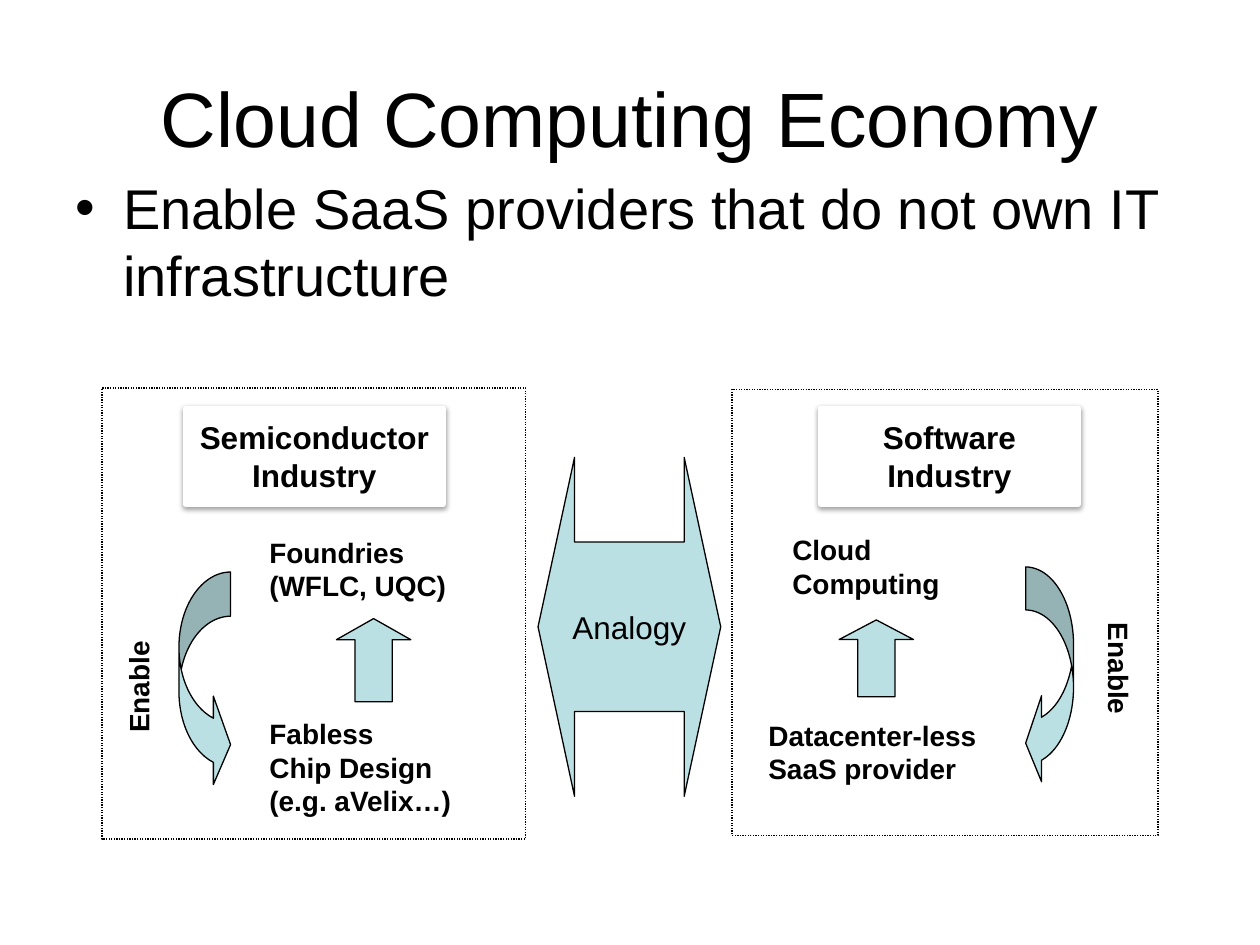
"""Build the Cloud Computing Economy slide, comparing two industries."""
from dataclasses import dataclass

from lxml import etree
from pptx import Presentation
from pptx import util as u
from pptx.dml.color import RGBColor
from pptx.enum import dml, shapes, text
from pptx.oxml import ns

PX = 9144
BLACK = RGBColor(0x00, 0x00, 0x00)
WHITE = RGBColor(0xFF, 0xFF, 0xFF)
TEAL = RGBColor(0xBB, 0xE0, 0xE3)
FONT = "Arial"
GEOMETRY = shapes.MSO_SHAPE
CENTER = text.PP_ALIGN.CENTER
MIDDLE = text.MSO_ANCHOR.MIDDLE


@dataclass(frozen=True)
class Box:
    left: int
    top: int
    width: int
    height: int

    def emu(self) -> list[u.Emu]:
        return [u.Emu(n * PX) for n in (self.left, self.top, self.width, self.height)]


@dataclass(frozen=True)
class Label:
    box: Box
    lines: tuple[str, ...]
    rotation: int = 0


@dataclass(frozen=True)
class Arrow:
    geometry: GEOMETRY
    box: Box
    adjustments: tuple[float, ...]


@dataclass(frozen=True)
class Industry:
    frame: Box
    heading_box: Box
    heading: tuple[str, ...]
    arrows: tuple[Arrow, ...]
    labels: tuple[Label, ...]


SEMICONDUCTOR = Industry(
    Box(81, 308, 336, 358),
    Box(147, 324, 205, 76),
    ("Semiconductor", "Industry"),
    (
        Arrow(GEOMETRY.UP_ARROW, Box(267, 491, 59, 66), (0.5, 0.284)),
        Arrow(GEOMETRY.CURVED_RIGHT_ARROW, Box(142, 454, 41, 172), (0.855, 1.711, 0.333)),
    ),
    (
        Label(Box(204, 420, 174, 67), ("Foundries", "(WFLC, UQC)")),
        Label(Box(204, 564, 182, 97), ("Fabless", "Chip Design", "(e.g. aVelix…)")),
        Label(Box(62, 522, 99, 40), ("Enable",), 270),
    ),
)
SOFTWARE = Industry(
    Box(581, 309, 338, 354),
    Box(651, 324, 205, 76),
    ("Software", "Industry"),
    (
        Arrow(GEOMETRY.UP_ARROW, Box(666, 492, 59, 61), (0.5, 0.264)),
        Arrow(GEOMETRY.CURVED_LEFT_ARROW, Box(814, 450, 38, 174), (0.899, 1.798, 0.333)),
    ),
    (
        Label(Box(619, 418, 149, 68), ("Cloud", "Computing")),
        Label(Box(600, 565, 201, 68), ("Datacenter-less", "SaaS provider")),
        Label(Box(837, 514, 99, 40), ("Enable",), 90),
    ),
)
ANALOGY = Arrow(GEOMETRY.LEFT_RIGHT_ARROW, Box(427, 363, 145, 269), (0.5, 0.2))


def write(shape, lines: tuple[str, ...], size: int, bold: bool = False,
          align=text.PP_ALIGN.LEFT, anchor=text.MSO_ANCHOR.TOP, wrap: bool = True) -> None:
    frame = shape.text_frame
    frame.word_wrap = wrap
    frame.vertical_anchor = anchor
    for index, line in enumerate(lines):
        paragraph = frame.add_paragraph() if index else frame.paragraphs[0]
        paragraph.alignment = align
        run = paragraph.add_run()
        run.text = line
        run.font.name = FONT
        run.font.size = u.Pt(size)
        run.font.bold = bold
        run.font.color.rgb = BLACK


def add_label(slide, label: Label) -> None:
    shape = slide.shapes.add_textbox(*label.box.emu())
    write(shape, label.lines, 16, bold=True, wrap=False)
    shape.text_frame.auto_size = text.MSO_AUTO_SIZE.SHAPE_TO_FIT_TEXT
    shape.rotation = label.rotation


def add_outlined(slide, geometry: GEOMETRY, box: Box, line: RGBColor = BLACK,
                 line_width: float = 0.75):
    shape = slide.shapes.add_shape(geometry, *box.emu())
    shape.shadow.inherit = False
    shape.line.color.rgb = line
    shape.line.width = u.Pt(line_width)
    return shape


def add_arrow(slide, arrow: Arrow):
    shape = add_outlined(slide, arrow.geometry, arrow.box)
    shape.fill.solid()
    shape.fill.fore_color.rgb = TEAL
    for index, value in enumerate(arrow.adjustments):
        shape.adjustments[index] = value
    return shape


def add_frame(slide, box: Box) -> None:
    shape = add_outlined(slide, GEOMETRY.RECTANGLE, box)
    shape.fill.background()
    shape.line.dash_style = dml.MSO_LINE.ROUND_DOT


def add_heading(slide, box: Box, lines: tuple[str, ...]) -> None:
    shape = add_outlined(slide, GEOMETRY.RECTANGLE, box, WHITE, 3)
    shape.fill.solid()
    shape.fill.fore_color.rgb = WHITE
    effects = shape._element.spPr.find(ns.qn("a:effectLst"))
    shadow = etree.SubElement(
        effects, ns.qn("a:outerShdw"), blurRad=str(u.Pt(3.1)), dist=str(u.Pt(1.6)),
        dir="5400000", rotWithShape="0")
    color = etree.SubElement(shadow, ns.qn("a:srgbClr"), val=str(BLACK))
    etree.SubElement(color, ns.qn("a:alpha"), val="38000")
    write(shape, lines, 18, bold=True, align=CENTER, anchor=MIDDLE)


def add_bullet(slide, box: Box, line: str) -> None:
    shape = slide.shapes.add_textbox(*box.emu())
    write(shape, (line,), 32)
    paragraph = shape.text_frame.paragraphs[0]
    paragraph.space_before = u.Pt(6.4)
    properties = paragraph._p.get_or_add_pPr()
    properties.set("marL", str(38 * PX))
    properties.set("indent", str(-38 * PX))
    etree.SubElement(properties, ns.qn("a:buFont"), typeface=FONT)
    etree.SubElement(properties, ns.qn("a:buChar"), char="•")


def add_industry(slide, industry: Industry) -> None:
    add_frame(slide, industry.frame)
    add_heading(slide, industry.heading_box, industry.heading)
    for arrow in industry.arrows:
        add_arrow(slide, arrow)
    for label in industry.labels:
        add_label(slide, label)


def main() -> None:
    presentation = Presentation()
    presentation.slide_width = u.Emu(1000 * PX)
    presentation.slide_height = u.Emu(750 * PX)
    slide = presentation.slides.add_slide(presentation.slide_layouts[6])
    title = slide.shapes.add_textbox(*Box(50, 30, 900, 125).emu())
    write(title, ("Cloud Computing Economy",), 44, align=CENTER, anchor=MIDDLE)
    add_bullet(slide, Box(50, 133, 900, 540),
               "Enable SaaS providers that do not own IT infrastructure")
    analogy = add_arrow(slide, ANALOGY)
    write(analogy, ("Analogy",), 18, align=CENTER, anchor=MIDDLE, wrap=False)
    for industry in (SEMICONDUCTOR, SOFTWARE):
        add_industry(slide, industry)
    presentation.save("out.pptx")


if __name__ == "__main__":
    main()
